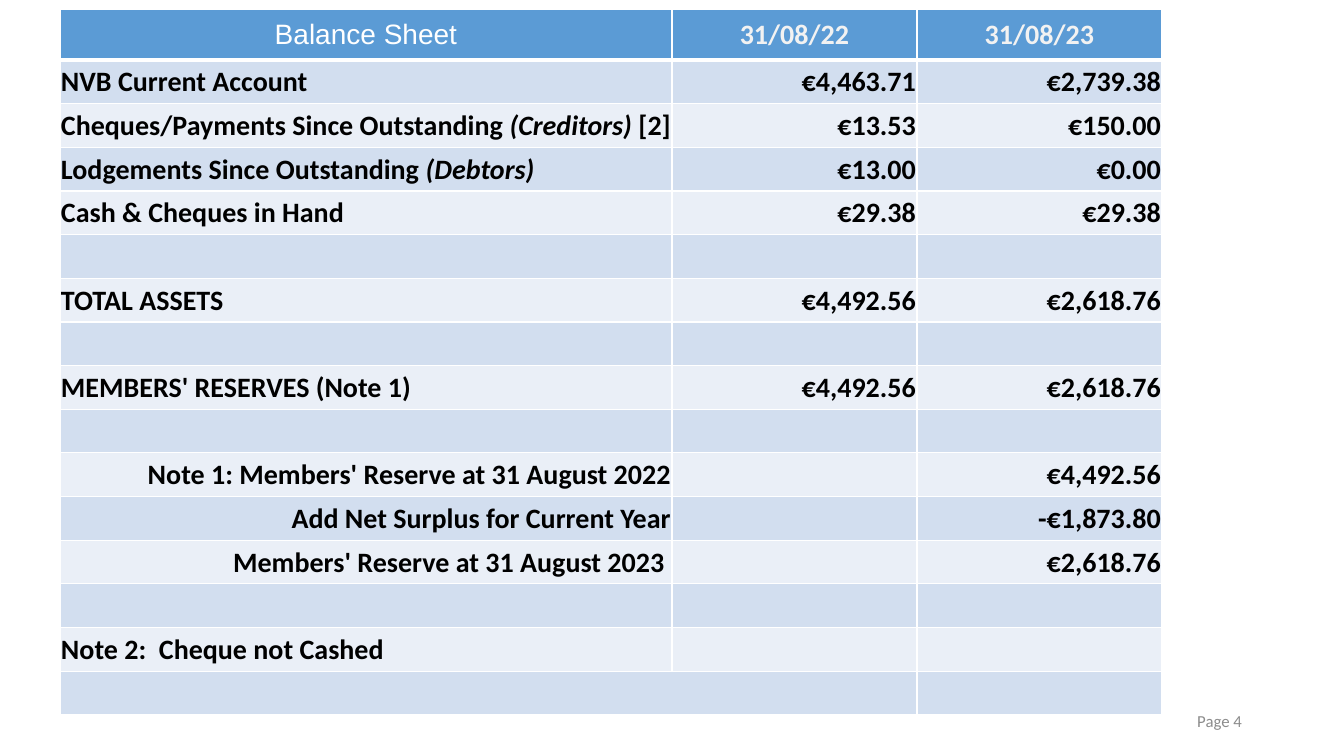
from lxml.etree import SubElement
from pptx import Presentation
from pptx.dml.color import RGBColor
from pptx.enum.text import MSO_ANCHOR, PP_ALIGN
from pptx.oxml.ns import qn
from pptx.util import Pt

LEFT, CENTER, RIGHT = PP_ALIGN.LEFT, PP_ALIGN.CENTER, PP_ALIGN.RIGHT
HEADER = ["Balance Sheet", "31/08/22", "31/08/23"]
ROWS = [
    (LEFT, "NVB Current Account", "€4,463.71", "€2,739.38"),
    (LEFT, "Cheques/Payments Since Outstanding *(Creditors)* [2]", "€13.53", "€150.00"),
    (LEFT, "Lodgements Since Outstanding *(Debtors)*", "€13.00", "€0.00"),
    (LEFT, "Cash & Cheques in Hand", "€29.38", "€29.38"),
    (LEFT, "", "", ""),
    (LEFT, "TOTAL ASSETS", "€4,492.56", "€2,618.76"),
    (LEFT, "", "", ""),
    (LEFT, "MEMBERS' RESERVES (Note 1)", "€4,492.56", "€2,618.76"),
    (LEFT, "", "", ""),
    (RIGHT, "Note 1: Members' Reserve at 31 August 2022", "", "€4,492.56"),
    (RIGHT, "Add Net Surplus for Current Year", "", "-€1,873.80"),
    (RIGHT, "Members' Reserve at 31 August 2023 ", "", "€2,618.76"),
    (LEFT, "", "", ""),
    (LEFT, "Note 2:  Cheque not Cashed", "", ""),
    (LEFT, "", "", ""),
]
COLS = [612, 245, 245]
HEADER_H, BODY_H = 51, 655


def px(n):
    return round(n * 914400 / 100.8)


def rgb(color):
    return RGBColor.from_string(color)


class Deck:
    """Holds the style and the current slide."""

    body = {"name": "Calibri", "size": Pt(20), "bold": True}
    title = {"name": "Arial", "size": Pt(20), "bold": False}
    footer = {"name": "Calibri", "size": Pt(12), "bold": False}
    header_fill = "5B9BD5"
    bands = ["D2DEEF", "EAEFF7"]
    border = "FFFFFF"

    def __init__(self):
        self.prs = Presentation()
        self.prs.slide_width, self.prs.slide_height = px(1344), px(756)
        self.s = self.prs.slides.add_slide(self.prs.slide_layouts[6])

    def runs(self, tf, text, align, font, color):
        p = tf.paragraphs[0]
        p.alignment = align
        for i, part in enumerate(text.split("*")):
            if part:
                r = p.add_run()
                r.text = part
                for key, value in {**font, "italic": i % 2 == 1}.items():
                    setattr(r.font, key, value)
                r.font.color.rgb = rgb(color)

    def cell(self, cell, text, align, font, color, fill, bottom=1, side=1):
        margins = {"margin_left": px(side), "margin_top": px(1),
                   "margin_right": px(side), "margin_bottom": 0}
        for key, value in {**margins, "vertical_anchor": MSO_ANCHOR.MIDDLE}.items():
            setattr(cell, key, value)
        tcPr = cell._tc.get_or_add_tcPr()
        for edge, width in {"L": 1, "R": 1, "T": 1, "B": bottom}.items():
            ln = SubElement(tcPr, qn("a:ln" + edge), w=str(Pt(width)))
            SubElement(SubElement(ln, qn("a:solidFill")), qn("a:srgbClr"), val=self.border)
        cell.fill.solid()
        cell.fill.fore_color.rgb = rgb(fill)
        self.runs(cell.text_frame, text, align, font, color)

    def table(self, x, y, header, rows):
        frame = self.s.shapes.add_table(len(rows) + 1, len(COLS), px(x), px(y),
                                        px(sum(COLS)), px(HEADER_H + BODY_H))
        table = frame.table
        for column, width in zip(table.columns, COLS):
            column.width = px(width)
        table.rows[0].height = px(HEADER_H)
        for c, text in enumerate(header):
            font, color, side = (self.body, "F2F2F2", 1) if c else (self.title, "FFFFFF", 7)
            self.cell(table.cell(0, c), text, CENTER, font, color, self.header_fill, 3, side)
        for i, (align, *texts) in enumerate(rows):
            table.rows[i + 1].height = px(BODY_H / len(rows))
            for c, text in enumerate(texts):
                self.cell(table.cell(i + 1, c), text, RIGHT if c else align,
                          self.body, "000000", self.bands[i % 2])
        return table

    def text(self, x, y, w, h, text, align, font, color):
        tf = self.s.shapes.add_textbox(px(x), px(y), px(w), px(h)).text_frame
        tf.word_wrap = True
        tf.vertical_anchor = MSO_ANCHOR.MIDDLE
        self.runs(tf, text, align, font, color)


def main():
    deck = Deck()
    table = deck.table(60, 9, HEADER, ROWS)
    last = len(ROWS)
    table.cell(last, 0).merge(table.cell(last, 1))
    deck.text(950, 701, 302, 40, "Page 4", RIGHT, deck.footer, "8C8C8C")
    deck.prs.save("out.pptx")


if __name__ == "__main__":
    main()
